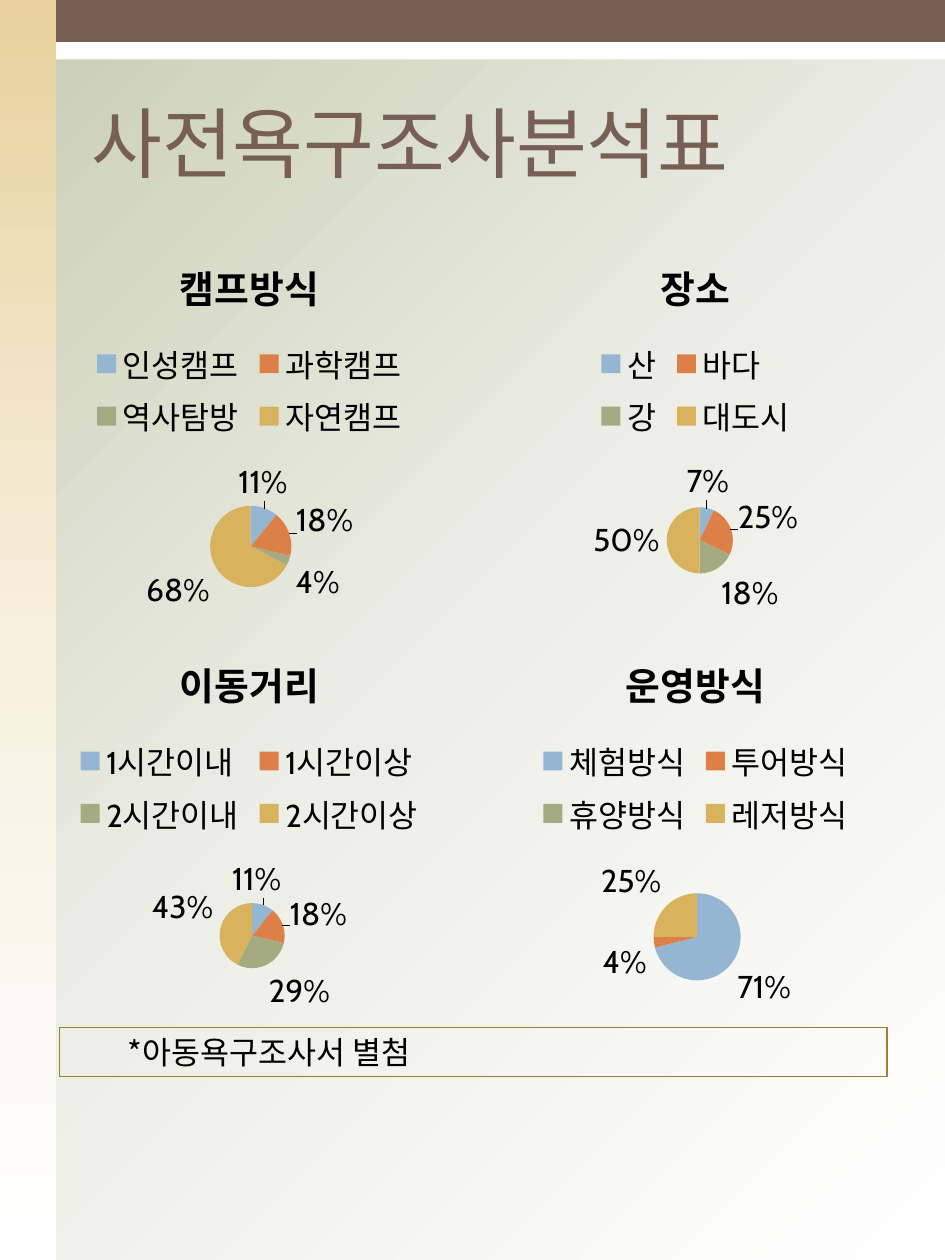
from copy import deepcopy

from pptx import Presentation
from pptx.chart.data import CategoryChartData
from pptx.dml.color import RGBColor
from pptx.enum.chart import XL_CHART_TYPE, XL_LEGEND_POSITION
from pptx.enum.shapes import MSO_SHAPE
from pptx.enum.text import MSO_ANCHOR
from pptx.oxml.ns import qn
from pptx.util import Pt

PIE = XL_CHART_TYPE.PIE
TOP = XL_LEGEND_POSITION.TOP
RECT = MSO_SHAPE.RECTANGLE
LOW, HIGH = MSO_ANCHOR.BOTTOM, MSO_ANCHOR.TOP

HANGUL, LATIN = "Noto Sans CJK KR", "Cabin"
COLORS = {
    "white": "FFFFFF", "black": "000000", "brown": "775F55", "gold": "A17C36",
    "sage": "C9CDB3", "mist": "EDEEE6", "sand": "E8D19D", "cream": "F7F0DE",
}
SLICES = ["94B6D2", "DD8047", "A5AB81", "D8B25C"]
PIES = [
    ("캠프방식", {"인성캠프": 11, "과학캠프": 18, "역사탐방": 4, "자연캠프": 68}),
    ("장소", {"산": 7, "바다": 25, "강": 18, "대도시": 50}),
    ("이동거리", {"1시간이내": 11, "1시간이상": 18, "2시간이내": 29, "2시간이상": 43}),
    ("운영방식", {"체험방식": 71, "투어방식": 4, "휴양방식": 0, "레저방식": 25}),
]


def shade(name):
    """Return the named colour."""
    return RGBColor.from_string(COLORS[name])


def blend(fill, owner, names, angle):
    """Fill with evenly spaced colours; the angle runs anticlockwise."""
    fill.gradient()
    fill.gradient_angle = angle
    stops = next(owner.iter(qn("a:gsLst")))
    while len(stops) < len(names):
        stops.append(deepcopy(stops[-1]))
    for i, (stop, name) in enumerate(zip(fill.gradient_stops, names)):
        stop.color.rgb = shade(name)
        stop.position = i / (len(names) - 1)


def add_bar(slide, box, fill=None, line=None):
    """Add a plain rectangle and return it."""
    bar = slide.shapes.add_shape(RECT, *map(Pt, box))
    bar.shadow.inherit = False
    bar.fill.background()
    bar.line.fill.background()
    if fill:
        bar.fill.solid()
        bar.fill.fore_color.rgb = shade(fill)
    if line:
        bar.line.color.rgb = shade(line)
        bar.line.width = Pt(0.75)
    return bar


def add_text(slide, box, text, size, color="black", anchor=HIGH,
             wrap=True, before=0, indent=0):
    """Add one paragraph of text."""
    frame = slide.shapes.add_textbox(*map(Pt, box)).text_frame
    frame.word_wrap = wrap
    frame.vertical_anchor = anchor
    para = frame.paragraphs[0]
    para.space_before = Pt(before)
    if indent:
        props = para._p.get_or_add_pPr()
        props.set("marL", str(Pt(indent)))
        props.set("indent", str(-Pt(indent)))
    run = para.add_run()
    run.text = text
    run.font.size = Pt(size)
    run.font.name = HANGUL
    run.font.color.rgb = shade(color)
    east = run.font._element.makeelement(qn("a:ea"), {"typeface": HANGUL})
    run.font._element.append(east)


def add_pie(slide, box, title, shares):
    """Add a titled pie with a legend on top and percent labels."""
    data = CategoryChartData()
    data.categories = list(shares)
    data.add_series(title, list(shares.values()))
    chart = slide.shapes.add_chart(PIE, *map(Pt, box), data).chart
    chart.font.size = Pt(18)
    chart.font.name = LATIN
    chart.font.color.rgb = shade("black")

    chart.has_title = True
    head = chart.chart_title.text_frame
    head.text = title
    font = head.paragraphs[0].runs[0].font
    font.size, font.bold, font.name = Pt(21.6), True, LATIN
    font.color.rgb = shade("black")

    chart.has_legend = True
    chart.legend.position = TOP
    chart.legend.include_in_layout = False

    series = chart.plots[0].series[0]
    for i, color in enumerate(SLICES):
        fill = series.points[i].format.fill
        fill.solid()
        fill.fore_color.rgb = RGBColor.from_string(color)
    labels = series.data_labels
    labels.show_value = True
    labels.number_format = '0"%";;'
    labels.number_format_is_linked = False


def add_frame(slide, box):
    """Paint the background, the side band and the top bars."""
    x, y, w, h = box
    side = 32
    blend(slide.background.fill, slide.element, ["sage", "mist", "white"], 315)
    add_bar(slide, (x, y, w, 34), fill="white")
    band = add_bar(slide, (x, y, side, h))
    blend(band.fill, band.element, ["sand", "cream", "white"], 270)
    add_bar(slide, (x + side, y, w - side, 24), fill="brown")


def add_grid(slide, box):
    """Lay the pies out in two columns."""
    x, y, w, h = box
    w, h = w / 2, h / 2
    for i, (title, shares) in enumerate(PIES):
        row, col = divmod(i, 2)
        add_pie(slide, (x + col * w, y + row * h, w, h), title, shares)


def add_note(slide, box):
    """Add the outlined note."""
    x, y, w, h = box
    add_bar(slide, box, line="gold")
    add_text(slide, (x + 32, y, 192, h), "*아동욕구조사서 별첨", 18,
             wrap=False, before=7, indent=25)


def main():
    """Build and save the slide."""
    deck = Presentation()
    deck.slide_width, deck.slide_height = Pt(540), Pt(720)
    slide = deck.slides.add_slide(deck.slide_layouts[6])
    add_frame(slide, (0, 0, 540, 720))
    add_text(slide, (45, 40, 472, 71), "사전욕구조사분석표", 44,
             color="brown", anchor=LOW)
    add_grid(slide, (15, 133, 510, 454))
    add_note(slide, (34, 587, 473, 28))
    deck.save("out.pptx")


if __name__ == "__main__":
    main()
